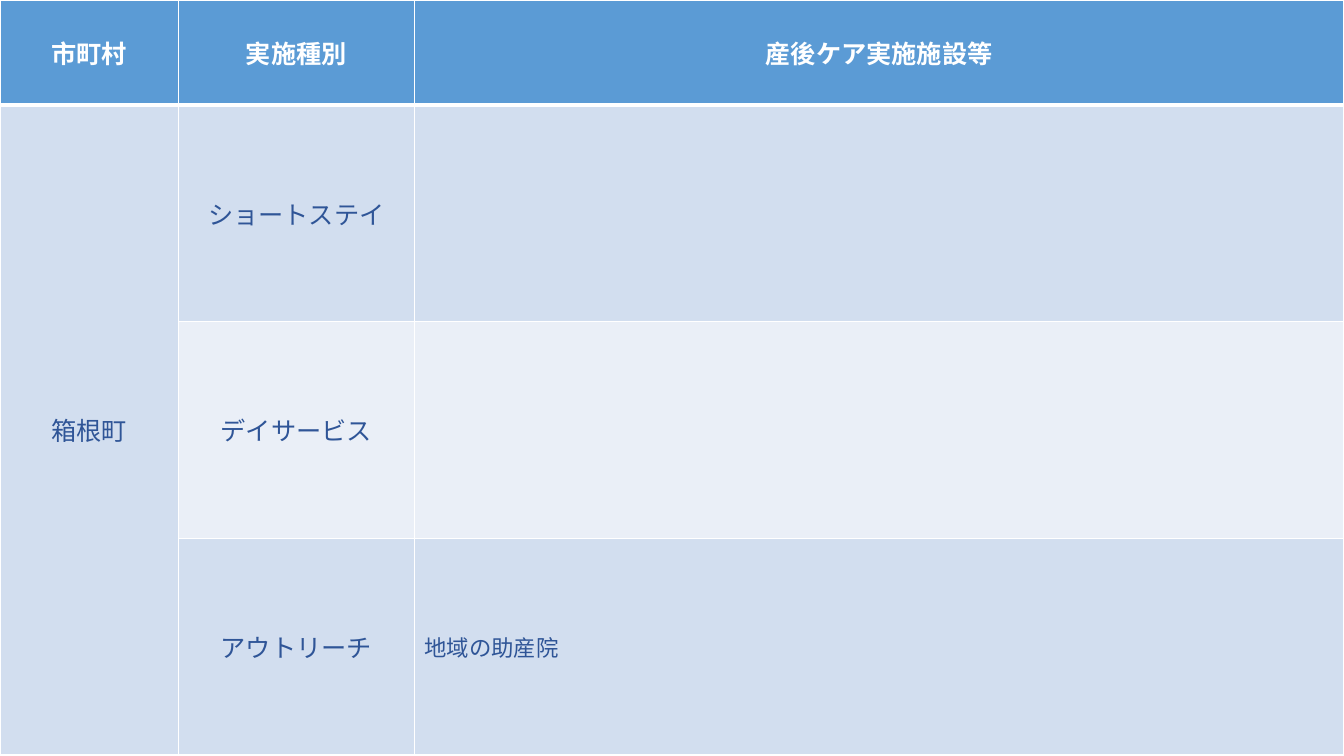
from dataclasses import dataclass

from lxml import etree
from pptx import Presentation
from pptx.dml.color import RGBColor
from pptx.enum.text import MSO_ANCHOR, PP_ALIGN
from pptx.oxml.ns import qn
from pptx.util import Inches, Pt

MID = MSO_ANCHOR.MIDDLE
LEFT, CENTER = PP_ALIGN.LEFT, PP_ALIGN.CENTER

HEADS = ["市町村", "実施種別", "産後ケア実施施設等"]
TOWN = "箱根町"
CARE = [
    ("ショートステイ", ""),
    ("デイサービス", ""),
    ("アウトリーチ", "地域の助産院"),
]
WIDTHS = [1.77, 2.34, 9.22]
HEAD_H, ROW_H = 1.04, 2.15


@dataclass(frozen=True)
class Theme:
    font: str = "Noto Sans CJK JP"
    head: str = "5B9BD5"
    bands: tuple = ("D2DEEF", "EAEFF7")
    white: str = "FFFFFF"
    ink: str = "2F5597"
    main: int = 18
    small: int = 16
    thin: int = 1
    thick: int = 3


THEME = Theme()


def put_text(cell, text, size=THEME.main, color=THEME.ink, bold=False, align=CENTER):
    cell.vertical_anchor = MID
    para = cell.text_frame.paragraphs[0]
    para.alignment = align
    if not text:
        para.font.size = Pt(size)
        return
    run = para.add_run()
    run.text = text
    font = run.font
    font.name, font.size, font.bold = THEME.font, Pt(size), bold
    font.color.rgb = RGBColor.from_string(color)
    east = etree.SubElement(run._r.get_or_add_rPr(), qn("a:ea"))
    east.set("typeface", THEME.font)


def paint(cell, color, top, base):
    cell.fill.solid()
    cell.fill.fore_color.rgb = RGBColor.from_string(color)
    props = cell._tc.get_or_add_tcPr()
    sides = {"L": THEME.thin, "R": THEME.thin, "T": top, "B": base}
    for spot, (side, width) in enumerate(sides.items()):
        line = etree.Element(qn("a:ln" + side), w=str(Pt(width)))
        fill = etree.SubElement(line, qn("a:solidFill"))
        etree.SubElement(fill, qn("a:srgbClr"), val=THEME.white)
        props.insert(spot, line)


def main():
    deck = Presentation()
    deck.slide_width, deck.slide_height = Inches(13.33), Inches(7.5)
    slide = deck.slides.add_slide(deck.slide_layouts[6])
    count = len(CARE) + 1
    table = slide.shapes.add_table(
        count, len(HEADS), 0, 0, Inches(sum(WIDTHS)), Inches(HEAD_H + ROW_H * len(CARE))
    ).table
    for col, width in zip(table.columns, WIDTHS):
        col.width = Inches(width)

    for r, row in enumerate(table.rows):
        row.height = Inches(ROW_H if r else HEAD_H)
        for c, cell in enumerate(row.cells):
            band = THEME.bands[(r - 1) % 2 if c else 0]
            top = THEME.thick if r == 1 else THEME.thin
            base = THEME.thin if r else THEME.thick
            paint(cell, band if r else THEME.head, top, base)

    for c, head in enumerate(HEADS):
        put_text(table.cell(0, c), head, color=THEME.white, bold=True)
    table.cell(1, 0).merge(table.cell(count - 1, 0))
    put_text(table.cell(1, 0), TOWN)
    for r, (kind, place) in enumerate(CARE, 1):
        put_text(table.cell(r, 1), kind)
        put_text(table.cell(r, 2), place, size=THEME.small, align=LEFT)

    deck.save("out.pptx")


if __name__ == "__main__":
    main()
